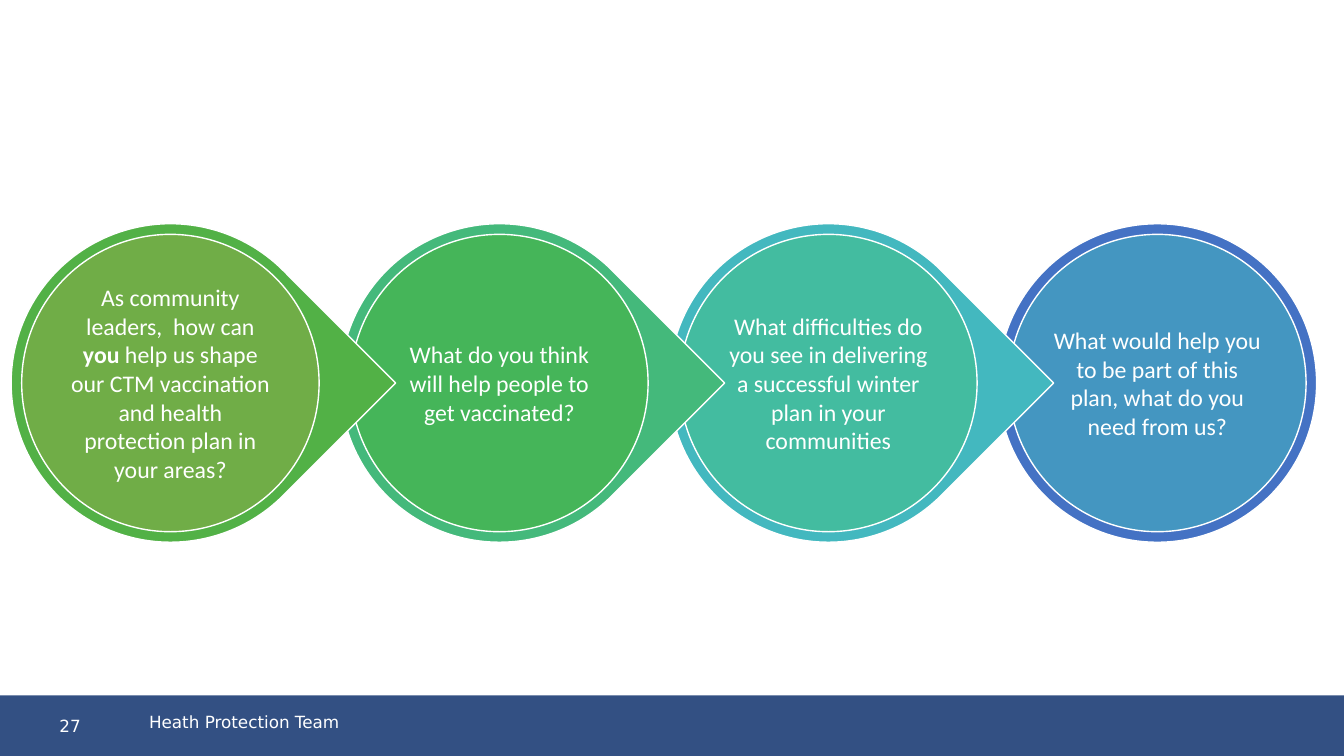
from dataclasses import dataclass

from pptx import Presentation
from pptx.dml.color import RGBColor
from pptx.enum.shapes import MSO_SHAPE
from pptx.enum.text import MSO_ANCHOR, PP_ALIGN
from pptx.shapes.autoshape import Shape
from pptx.slide import Slide
from pptx.util import Inches, Pt

SLIDE_WIDTH, SLIDE_HEIGHT = 13.33, 7.5
COLUMN_START, COLUMN_PITCH = 1.69, 3.263
ROW_CENTRE = 3.8
OUTER_SIZE, INNER_SIZE, TEXT_SIZE = 3.16, 2.95, 2.11
FOOTER_HEIGHT = 0.08 * SLIDE_HEIGHT


@dataclass(frozen=True)
class Theme:
    white: str = "FFFFFF"
    footer: str = "335083"
    question_font: str = "Calibri"
    footer_font: str = "DejaVu Sans"
    question_size: float = 17
    footer_size: float = 12
    outline_width: float = 1


@dataclass(frozen=True)
class Question:
    runs: tuple[str, ...]
    outer_color: str
    inner_color: str
    bold_run: int = -1
    points_on: bool = True


THEME = Theme()
QUESTIONS = (
    Question(
        ("As community leaders,  how can ", "you",
         " help us shape our CTM vaccination and health protection plan in your areas?"),
        "52B146", "70AD47", bold_run=1,
    ),
    Question(("What do you think will help people to get vaccinated?",), "44B97B", "45B559"),
    Question(
        ("What difficulties do you see in delivering a successful winter plan in your communities",),
        "43B8BF", "43BCA0",
    ),
    Question(
        ("What would help you to be part of this plan, what do you need from us?",),
        "4472C4", "4496C1", points_on=False,
    ),
)


def write_text(
    shape: Shape,
    *runs: str,
    font: str,
    size: float,
    bold_run: int = -1,
    align: PP_ALIGN = PP_ALIGN.LEFT,
    anchor: MSO_ANCHOR = MSO_ANCHOR.MIDDLE,
    margins: tuple[float, float, float, float] = (0.02, 0.02, 0.02, 0.02),
) -> None:
    frame = shape.text_frame
    frame.word_wrap = True
    frame.vertical_anchor = anchor
    frame.margin_left, frame.margin_top, frame.margin_right, frame.margin_bottom = map(Inches, margins)
    paragraph = frame.paragraphs[0]
    paragraph.alignment = align
    for index, text in enumerate(runs):
        run = paragraph.add_run()
        run.text = text
        run.font.name = font
        run.font.size = Pt(size)
        run.font.bold = index == bold_run
        run.font.color.rgb = RGBColor.from_string(THEME.white)


def centred_box(centre: float, size: float) -> tuple[Inches, ...]:
    return tuple(map(Inches, (centre - size / 2, ROW_CENTRE - size / 2, size, size)))


def add_disc(slide: Slide, kind: MSO_SHAPE, centre: float, size: float, color: str) -> Shape:
    disc = slide.shapes.add_shape(kind, *centred_box(centre, size))
    disc.shadow.inherit = False
    disc.fill.solid()
    disc.fill.fore_color.rgb = RGBColor.from_string(color)
    disc.line.color.rgb = RGBColor.from_string(THEME.white)
    disc.line.width = Pt(THEME.outline_width)
    return disc


def add_question(slide: Slide, column: int, question: Question) -> None:
    centre = COLUMN_START + column * COLUMN_PITCH
    outer_kind = MSO_SHAPE.TEAR if question.points_on else MSO_SHAPE.OVAL
    outer = add_disc(slide, outer_kind, centre, OUTER_SIZE, question.outer_color)
    if question.points_on:
        outer.rotation = 45
        outer.adjustments[0] = 1
    add_disc(slide, MSO_SHAPE.OVAL, centre, INNER_SIZE, question.inner_color)
    label = slide.shapes.add_textbox(*centred_box(centre, TEXT_SIZE))
    write_text(
        label, *question.runs, font=THEME.question_font, size=THEME.question_size,
        bold_run=question.bold_run, align=PP_ALIGN.CENTER,
    )


def add_footer(slide: Slide, number: str, team: str) -> None:
    top = SLIDE_HEIGHT - FOOTER_HEIGHT
    band = slide.shapes.add_shape(
        MSO_SHAPE.RECTANGLE, 0, Inches(top), Inches(SLIDE_WIDTH), Inches(FOOTER_HEIGHT)
    )
    band.shadow.inherit = False
    band.fill.solid()
    band.fill.fore_color.rgb = RGBColor.from_string(THEME.footer)
    band.line.fill.background()
    write_text(band, number, font=THEME.footer_font, size=THEME.footer_size, margins=(0.59, 0, 0.1, 0))
    label = slide.shapes.add_textbox(Inches(1.38), Inches(7.01), Inches(11.17), Inches(0.49))
    write_text(
        label, team, font=THEME.footer_font, size=THEME.footer_size,
        anchor=MSO_ANCHOR.TOP, margins=(0.1, 0.05, 0.1, 0.05),
    )


def main() -> None:
    presentation = Presentation()
    presentation.slide_width = Inches(SLIDE_WIDTH)
    presentation.slide_height = Inches(SLIDE_HEIGHT)
    slide = presentation.slides.add_slide(presentation.slide_layouts[6])
    for column, question in reversed(list(enumerate(QUESTIONS))):
        add_question(slide, column, question)
    add_footer(slide, "27", "Heath Protection Team")
    presentation.save("out.pptx")


if __name__ == "__main__":
    main()
